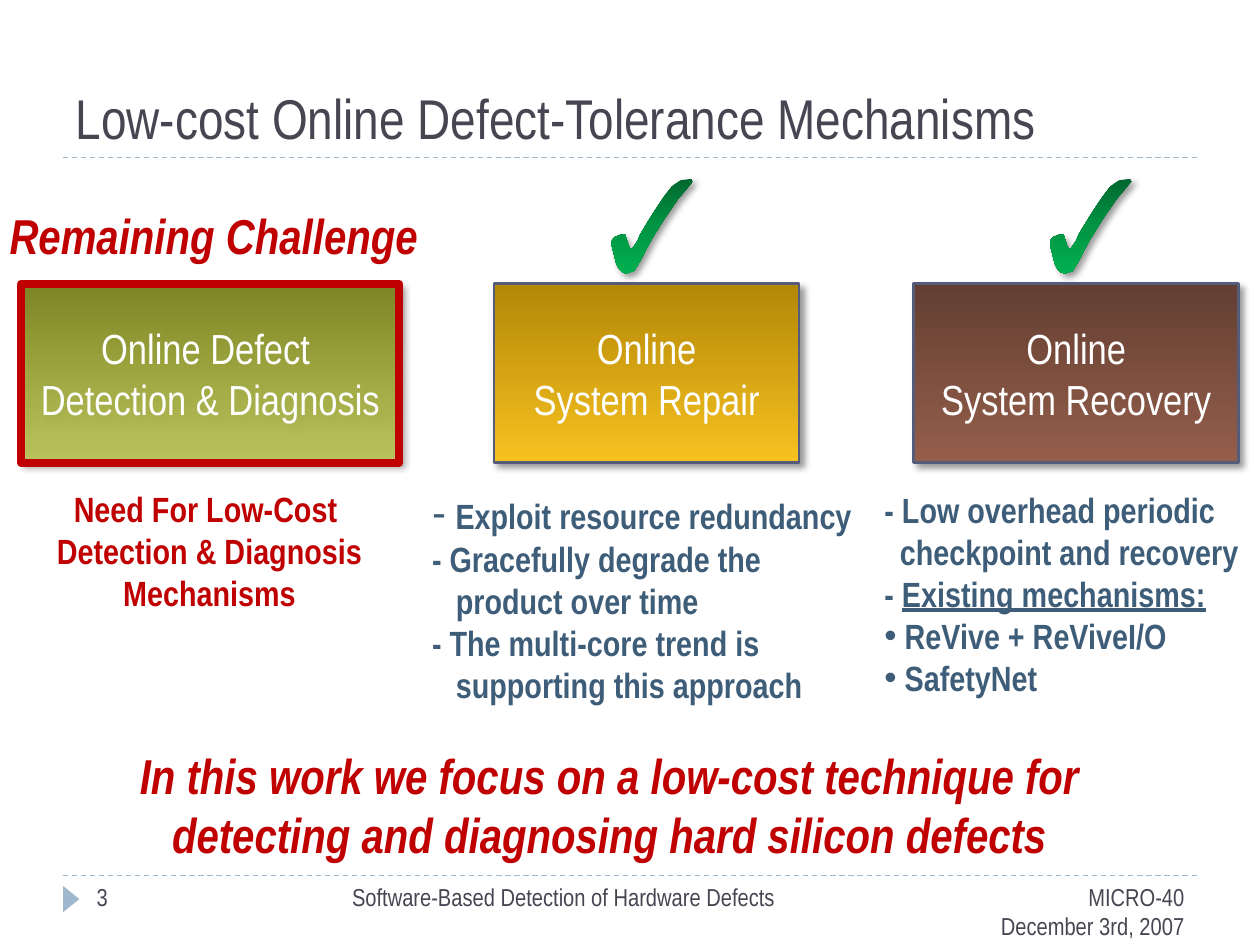
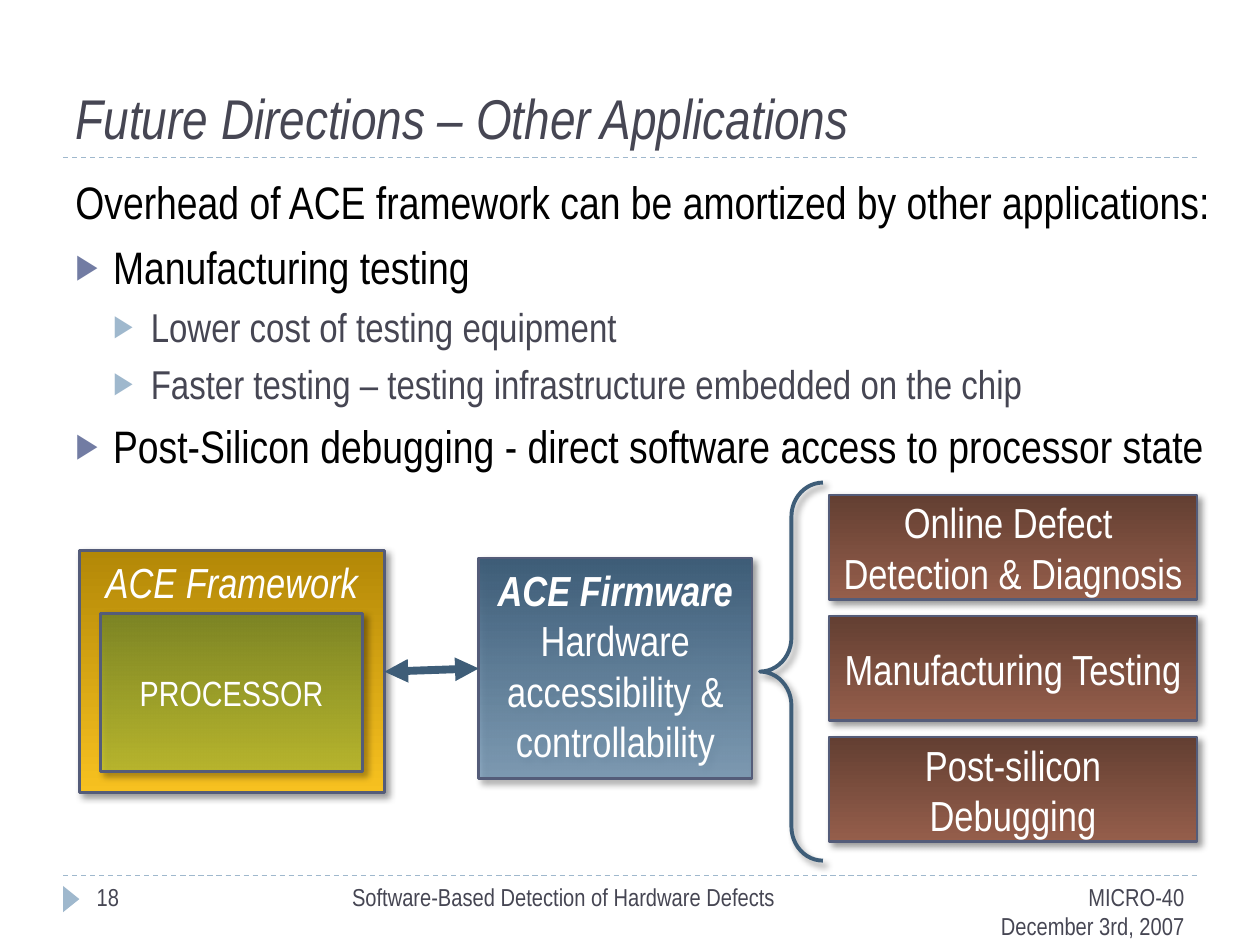
from lxml import etree
from pptx import Presentation
from pptx import util as u
from pptx.dml.color import RGBColor
from pptx.enum import dml, shapes, text
from pptx.oxml import ns

FONT = "Arial Narrow"
INK, PALE, EDGE = "464653", "9FB8CD", "545C79"
NAVY, RED, WHITE, BLACK = "3E5D78", "C00000", "FFFFFF", "000000"

# Gradient stops: position, colour, opacity (all but colour in percent)
OLIVE = [(0, "7D8525", 100), (100, "BCC838", 69)]
GOLD = [(0, "B38807", 100), (100, "F7C120", 100)]
BROWN = [(0, "633F32", 100), (100, "955E4B", 100)]
STEEL = [(0, NAVY, 100), (100, "638CAE", 69)]
GREEN = [(0, "00682F", 100), (50, "009443", 100), (100, "00B050", 100)]

LEFT, MID, RIGHT = text.PP_ALIGN.LEFT, text.PP_ALIGN.CENTER, text.PP_ALIGN.RIGHT
TOP, CENTRE, BASE = (text.MSO_ANCHOR.TOP, text.MSO_ANCHOR.MIDDLE,
                     text.MSO_ANCHOR.BOTTOM)

# Tick outline, in hundredths of its 2.54 cm design square
TICK = [(65, 2), (53, 16), (42, 32), (32, 48), (23, 65), (20, 70), (18, 73),
        (15, 74), (12, 75), (9, 74), (6, 71), (4, 67), (2, 59), (0, 51),
        (1, 48), (3, 46), (8, 44), (11, 44), (12, 47), (14, 53), (15, 55),
        (17, 55), (21, 49), (23, 44), (34, 26), (42, 14), (48, 6), (55, 1),
        (62, 0), (64, 0)]


def rgb(code):
    return RGBColor.from_string(code)


def cms(*sizes):
    return [u.Cm(size) for size in sizes]


def node(parent, tag, **attrs):
    """Append a drawing element with the given attributes."""
    item = etree.SubElement(parent, ns.qn("a:" + tag))
    for key, value in attrs.items():
        item.set(key, str(value))
    return item


# ---- Text ----
def bullet(par, mark, color=None, size=None):
    props = par._p.get_or_add_pPr()
    if color:
        node(node(props, "buClr"), "srgbClr", val=color)
    if size:
        node(props, "buSzPct", val=size * 1000)
    node(props, "buFont", typeface="Arial")
    node(props, "buChar", char=mark)


def add_run(par, words, size=24, color=WHITE, bold=False, italic=False,
            under=False):
    run = par.add_run()
    run.text = words
    font = run.font
    font.name, font.size, font.color.rgb = FONT, u.Pt(size), rgb(color)
    font.bold, font.italic, font.underline = bold, italic, under


def write(shape, lines, align=LEFT, anchor=TOP, wrap=True, **style):
    """Fill a shape; a line is a string, or a string with its own format.

    Own format may hold join (stay in the paragraph), mark (bullet),
    indent and hang (cm), before (points) and any run format.
    """
    frame = shape.text_frame
    frame.auto_size = text.MSO_AUTO_SIZE.NONE
    frame.word_wrap, frame.vertical_anchor = wrap, anchor
    par = None
    for line in lines:
        words, own = (line, {}) if isinstance(line, str) else line
        own = {**style, **own}
        mark, before = own.pop("mark", None), own.pop("before", None)
        indent, hang = own.pop("indent", 0), own.pop("hang", 0)
        if not own.pop("join", False):
            par = frame.paragraphs[0] if par is None else frame.add_paragraph()
            par.alignment = align
            if before:
                par.space_before = u.Pt(before)
            if indent:
                props = par._p.get_or_add_pPr()
                props.set("marL", str(u.Cm(indent)))
                props.set("indent", str(-u.Cm(hang)))
            if mark:
                bullet(par, *mark)
        add_run(par, words, **own)


def label(slide, place, lines, **style):
    write(slide.shapes.add_textbox(*cms(*place)), lines, **style)


# ---- Shapes ----
def blend(shape, stops):
    """Vertical gradient fill."""
    shape.fill.background()
    blank = shape._element.spPr.find(ns.qn("a:noFill"))
    grad = etree.Element(ns.qn("a:gradFill"), rotWithShape="1")
    group = node(grad, "gsLst")
    for at, code, alpha in stops:
        color = node(node(group, "gs", pos=at * 1000), "srgbClr", val=code)
        if alpha < 100:
            node(color, "alpha", val=alpha * 1000)
    node(grad, "lin", ang=90 * 60000, scaled=0)
    blank.getparent().replace(blank, grad)


def shade(shape):
    """Soft shadow down and to the right."""
    shape.shadow.inherit = False
    effects = shape._element.spPr.find(ns.qn("a:effectLst"))
    outer = node(effects, "outerShdw", blurRad=u.Pt(4), dist=u.Pt(3),
                 dir=45 * 60000, algn="tl", rotWithShape=0)
    node(node(outer, "srgbClr", val=BLACK), "alpha", val=40000)


def draw(slide, kind, place, fill=None, line=None, width=1.5):
    shape = slide.shapes.add_shape(kind, *cms(*place))
    shape.shadow.inherit = False
    if fill:
        shape.fill.solid()
        shape.fill.fore_color.rgb = rgb(fill)
    else:
        shape.fill.background()
    if line:
        shape.line.color.rgb, shape.line.width = rgb(line), u.Pt(width)
    else:
        shape.line.fill.background()
    return shape


def block(slide, place, stops, lines, anchor=CENTRE, **style):
    shape = draw(slide, shapes.MSO_SHAPE.RECTANGLE, place, line=EDGE)
    blend(shape, stops)
    shade(shape)
    write(shape, lines, align=MID, anchor=anchor, **style)
    return shape


def tick(slide, left, top):
    pen = slide.shapes.build_freeform(*TICK[0], scale=u.Cm(2.54) / 100)
    pen.add_line_segments(TICK[1:])
    shape = pen.convert_to_shape(*cms(left, top))
    shape.line.fill.background()
    blend(shape, GREEN)
    shade(shape)


def rule(slide, start, end, color, width):
    line = slide.shapes.add_connector(shapes.MSO_CONNECTOR.STRAIGHT,
                                      *cms(*start, *end))
    line.line.color.rgb, line.line.width = rgb(color), u.Pt(width)
    node(line._element.spPr, "effectLst")
    return line


def arrow(slide, first, second):
    """Double-headed link from the left of first to the right of second."""
    line = rule(slide, (0, 0), (1, 1), NAVY, 4.5)
    line.begin_connect(first, 1)
    line.end_connect(second, 3)
    pen = line.line._get_or_add_ln()
    node(pen, "headEnd", type="triangle")
    node(pen, "tailEnd", type="triangle")


# ---- What the slides share ----
def start(deck, title, number, italic=False):
    slide = deck.slides.add_slide(deck.slide_layouts[5])
    head = slide.shapes.title
    head.left, head.top, head.width, head.height = cms(1.27, 0.43, 22.86, 2.74)
    write(head, [title], anchor=BASE, size=32, color=INK, italic=italic)
    for y in (17.65, 3.18):
        line = rule(slide, (1.27, y), (24.13, y), PALE, 0.75)
        line.line.dash_style = dml.MSO_LINE.DASH
    mark = draw(slide, shapes.MSO_SHAPE.ISOSCELES_TRIANGLE,
                (1.17, 17.96, 0.53, 0.33), fill=PALE)
    mark.rotation = 90
    feet = [(16.71, 7.42, RIGHT, ["MICRO-40", "December 3rd, 2007"]),
            (1.7, 5.51, LEFT, [str(number)]),
            (6.15, 9.73, RIGHT,
             ["Software-Based Detection of Hardware Defects"])]
    for x, width, align, lines in feet:
        label(slide, (x, 17.65, width, 1.02), lines, align=align, size=14,
              color=INK)
    return slide


# ---- Slides ----
def tolerance(deck):
    slide = start(deck, "Low-cost Online Defect-Tolerance Mechanisms", 3)

    # Three mechanisms, two of them solved
    y, high = 5.72, 3.61
    for x, wide, stops, lines in [
            (0.43, 7.62, OLIVE, ["Online Defect ", "Detection & Diagnosis"]),
            (9.96, 6.15, GOLD, ["Online", "System Repair"]),
            (18.42, 6.55, BROWN, ["Online", "System Recovery"])]:
        block(slide, (x, y, wide, high), stops, lines)
    for x in (12.32, 21.16):
        tick(slide, x, 3.61)

    # Notes below the mechanisms
    notes = dict(size=20, color=NAVY, bold=True)
    more = dict(indent=0.48)
    label(slide, (8.46, 9.7, 9.32, 4.7), [
        (" ", dict(mark=("-",), size=24, bold=False)),
        ("Exploit resource redundancy", dict(join=True)),
        "- Gracefully degrade the",
        ("product over time", more),
        "- The multi-core trend is",
        ("supporting this approach", more)], **notes)
    dot = dict(mark=("•",))
    label(slide, (17.58, 9.73, 8.05, 5.38), [
        "- Low overhead periodic",
        ("checkpoint and recovery", dict(indent=0.31)),
        "- ",
        ("Existing mechanisms:", dict(join=True, under=True)),
        (" ReVive + ReViveI/O", dot),
        (" SafetyNet", dot)], **notes)

    # The open challenge, in red
    draw(slide, shapes.MSO_SHAPE.RECTANGLE, (0.43, y, 7.62, high), line=RED,
         width=4.5)
    alert = dict(align=MID, color=RED, bold=True)
    label(slide, (0.2, 9.7, 8.05, 2.82),
          ["Need For Low-Cost ", "Detection & Diagnosis Mechanisms"],
          size=20, **alert)
    label(slide, (-0.1, 4.01, 8.81, 1.45), ["Remaining Challenge"],
          size=28, italic=True, wrap=False, **alert)
    label(slide, (2.54, 14.91, 19.48, 2.64),
          ["In this work we focus on a low-cost technique for detecting and "
           "diagnosing hard silicon defects"], size=28, italic=True, **alert)


def future(deck):
    slide = start(deck, "Future Directions – Other Applications", 18,
                  italic=True)

    # Outline
    plain = dict(indent=0.76, hang=0.76, before=6)
    main_pt = dict(plain, mark=("▶", "727CA3", 76))
    sub_pt = dict(indent=1.52, hang=0.76, before=5, mark=("▶", PALE, 76),
                  size=23, color=INK)
    label(slide, (1.27, 3.38, 23.5, 13.72), [
        ("Overhead of ACE framework can be amortized by other applications:",
         plain),
        ("Manufacturing testing", main_pt),
        ("Lower cost of testing equipment", sub_pt),
        ("Faster testing – testing infrastructure embedded on the chip",
         sub_pt),
        ("Post-Silicon debugging - direct software access to processor state",
         main_pt)], size=26, color=BLACK)

    # Framework and firmware
    frame = block(slide, (1.6, 11.1, 6.15, 4.88), GOLD, ["ACE Framework"],
                  anchor=TOP, italic=True)
    block(slide, (2.03, 12.37, 5.28, 3.18), OLIVE, ["PROCESSOR"], size=20)
    firm = block(slide, (9.65, 11.25, 5.51, 4.45), STEEL,
                 [("ACE Firmware", dict(bold=True, italic=True)),
                  "Hardware accessibility & controllability"], anchor=TOP)
    arrow(slide, firm, frame)

    # Applications
    uses = [["Online Defect ", "Detection & Diagnosis"],
            ["Manufacturing Testing"], ["Post-silicon Debugging"]]
    for row, lines in enumerate(uses):
        block(slide, (16.71, 9.98 + 2.44 * row, 7.42, 2.11), BROWN, lines)
    brace = draw(slide, shapes.MSO_SHAPE.LEFT_BRACE, (15.32, 9.73, 1.27, 7.62),
                 line=NAVY, width=2.25)
    brace.adjustments[0] = 0.54
    shade(brace)


def main():
    deck = Presentation()
    deck.slide_width, deck.slide_height = cms(25.4, 19.05)
    tolerance(deck)
    future(deck)
    deck.save("out.pptx")


if __name__ == "__main__":
    main()
